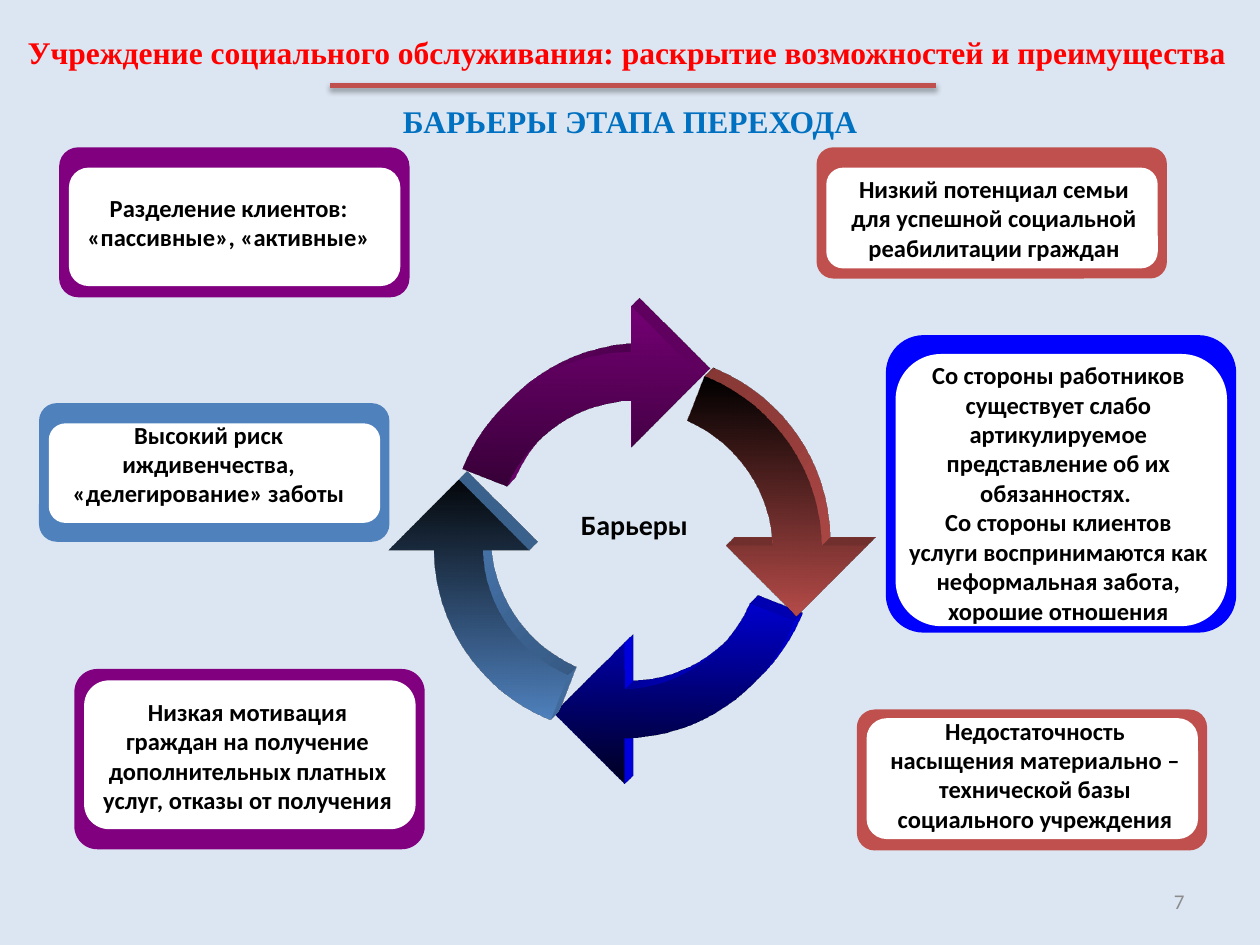
from dataclasses import dataclass

from lxml import etree
from pptx import Presentation
from pptx.dml.color import RGBColor
from pptx.enum import shapes, text
from pptx.oxml.ns import qn
from pptx.util import Pt


@dataclass(frozen=True)
class Theme:
    background: str = "DCE6F2"
    white: str = "FFFFFF"
    black: str = "000000"
    heading: str = "FF0000"
    subheading: str = "0070C0"
    number: str = "8C8C8C"
    purple: str = "800080"
    dark_purple: str = "260026"
    red: str = "C0504D"
    blue: str = "0000FF"
    steel: str = "4F81BD"
    heading_font: str = "Times New Roman"
    body_font: str = "Calibri"
    heading_size: int = 18
    center_size: int = 16
    body_size: int = 14
    number_size: int = 12


THEME = Theme()

# Frame (left, top, height), panel (top, height), text box, colour, paragraphs
CARDS = [
    ((22.3, 230.4, 79.2), (241.9, 56.9), (28.1, 236.2, 182.2, 58.3), THEME.steel,
     ["Высокий риск иждивенчества, «делегирование» заботы"]),
    ((33.8, 84.2, 85.7), (95.8, 67.7), (39.6, 106.6, 182.2, 41), THEME.purple,
     ["Разделение клиентов:", "«пассивные», «активные»"]),
    ((506.2, 191.5, 170), (202.3, 155.5), (511.9, 202.3, 185.8, 163.4), THEME.blue,
     ["Со стороны работников существует слабо артикулируемое представление "
      "об их обязанностях. ",
      "Со стороны клиентов услуги воспринимаются как неформальная забота, "
      "хорошие отношения"]),
    ((466.6, 84.2, 75), (95.8, 57.6), (478.1, 95.8, 180, 58.3), THEME.red,
     ["Низкий потенциал семьи для успешной социальной реабилитации граждан"]),
    ((42.5, 382.3, 103), (388.8, 85), (50.4, 394.6, 182.2, 74.9), THEME.purple,
     ["Низкая мотивация граждан на получение дополнительных платных услуг, "
      "отказы от получения"]),
    ((489.6, 405.4, 80.6), (410.4, 69.1), (500.4, 405.4, 182.2, 74.9), THEME.red,
     ["Недостаточность насыщения материально – технической базы "
      "социального учреждения"]),
]

# Left, top, quarter turns, dark and light gradient colours
ARROWS = [
    (252, 212.4, 1, THEME.black, THEME.blue),
    (247.7, 211, 2, THEME.black, THEME.steel),
    (254.9, 202.3, 3, THEME.dark_purple, THEME.purple),
    (258.5, 207.4, 0, THEME.black, THEME.red),
]
ARROW_SIZE = (211, 208)
ARROW_TILT = 22.9
ARROW_START = (176.9, 74.2)
# One point is a straight side, three are a curve
ARROW_SIDES = [
    [(164.5, 46.7), (135.7, 28.4), (105.7, 27.8)],
    [(105.3, 27.8), (104.8, 27.8), (104.4, 27.8)],
    [(103.6, 0.5)],
    [(104.4, 0.3), (105.1, 0.3), (105.9, 0.3)],
    [(148.1, 0.4), (185.9, 25.1), (202.8, 63.3)],
    [(226.7, 53.2)],
    [(205.2, 106)],
    [(152.4, 84.6)],
    [ARROW_START],
]


def rgb(value):
    return RGBColor.from_string(value)


def write(shape, paragraphs, *, size=THEME.body_size, font=THEME.body_font,
          color=THEME.black, bold=True, align=text.PP_ALIGN.CENTER,
          anchor=text.MSO_ANCHOR.TOP, wrap=True, grow=True):
    tf = shape.text_frame
    tf.word_wrap = wrap
    fit = text.MSO_AUTO_SIZE
    tf.auto_size = fit.SHAPE_TO_FIT_TEXT if grow else fit.NONE
    tf.vertical_anchor = anchor
    for i, line in enumerate(paragraphs):
        p = tf.add_paragraph() if i else tf.paragraphs[0]
        p.alignment = align
        r = p.add_run()
        r.text = line
        r.font.name, r.font.size, r.font.bold = font, Pt(size), bold
        r.font.color.rgb = rgb(color)


def add_text(s, box, paragraphs, **style):
    write(s.shapes.add_textbox(*map(Pt, box)), paragraphs, **style)


def add_rounded(s, box, color, radius):
    sp = s.shapes.add_shape(shapes.MSO_SHAPE.ROUNDED_RECTANGLE, *map(Pt, box))
    sp.adjustments[0] = radius
    sp.shadow.inherit = False
    sp.fill.solid()
    sp.fill.fore_color.rgb = rgb(color)
    sp.line.fill.background()


def add_header(s, box):
    left, top, width, height = box
    heading = dict(size=THEME.heading_size, font=THEME.heading_font,
                   align=text.PP_ALIGN.LEFT, wrap=False)
    title = s.shapes.title
    title.left, title.top, title.width, title.height = map(Pt, box)
    write(title, ["Учреждение социального обслуживания: раскрытие "
                  "возможностей и преимущества"], color=THEME.heading, **heading)

    # Rule with a soft shadow below
    y = top + 33.9
    rule = s.shapes.add_connector(shapes.MSO_CONNECTOR.STRAIGHT, Pt(left + 180),
                                  Pt(y), Pt(left + 526.3), Pt(y))
    rule.line.color.rgb = rgb(THEME.red)
    rule.line.width = Pt(3)
    effects = etree.SubElement(rule._element.spPr, qn("a:effectLst"))
    shadow = etree.SubElement(effects, qn("a:outerShdw"), blurRad=str(Pt(3.1)),
                              dist=str(Pt(1.8)), dir="5400000", rotWithShape="0")
    color = etree.SubElement(shadow, qn("a:srgbClr"), val=THEME.black)
    etree.SubElement(color, qn("a:alpha"), val="35000")

    add_text(s, (left + 214.6, top + 39.6, 276.5, height),
             ["БАРЬЕРЫ ЭТАПА ПЕРЕХОДА"], color=THEME.subheading, **heading)


def add_card(s, frame, panel, text_box, color, paragraphs):
    left, top, height = frame
    add_rounded(s, (left, top, 200.2, height), color, 0.127)
    add_rounded(s, (left + 5.6, panel[0], 189.4, panel[1]), THEME.white, 0.167)
    add_text(s, text_box, paragraphs)


def bend_sides(path, sides):
    """Turn each run of three straight segments into one curve."""
    lines = iter(path.findall(qn("a:lnTo")))
    for side in sides:
        segments = [next(lines) for _ in side]
        if len(side) == 3:
            curve = etree.Element(qn("a:cubicBezTo"))
            segments[0].addprevious(curve)
            for segment in segments:
                curve.append(segment[0])
                path.remove(segment)


def extrude(sp, color):
    """Give the shape a short oblique depth to the upper right."""
    scene = etree.SubElement(sp._element.spPr, qn("a:scene3d"))
    etree.SubElement(scene, qn("a:camera"), prst="legacyObliqueTopRight")
    etree.SubElement(scene, qn("a:lightRig"), rig="legacyFlat3", dir="b")
    solid = etree.SubElement(sp._element.spPr, qn("a:sp3d"),
                             extrusionH=str(Pt(13.6)),
                             prstMaterial="legacyMatte")
    side = etree.SubElement(solid, qn("a:extrusionClr"))
    etree.SubElement(side, qn("a:srgbClr"), val=color)


def add_arrow(s, left, top, turns, dark, light):
    # The frame corner anchors the outline, which fills only part of the frame
    builder = s.shapes.build_freeform(0, 0, scale=1.0)
    builder.move_to(*map(Pt, ARROW_START))
    builder.add_line_segments([(Pt(x), Pt(y)) for side in ARROW_SIDES
                               for x, y in side], close=True)
    sp = builder.convert_to_shape(Pt(left), Pt(top))
    sp.width, sp.height = map(Pt, ARROW_SIZE)
    path = sp._element.spPr.find(".//" + qn("a:path"))
    path.set("w", str(sp.width))
    path.set("h", str(sp.height))
    path.remove(path[0])
    bend_sides(path, ARROW_SIDES)

    sp.rotation = ARROW_TILT + 90 * turns
    sp.shadow.inherit = False
    sp.line.fill.background()
    sp.fill.gradient()
    sp.fill.gradient_angle = 315
    for stop, color, position in zip(sp.fill.gradient_stops, (dark, light), (0, 1)):
        stop.color.rgb = rgb(color)
        stop.position = position
    extrude(sp, light)


def add_cycle(s, label_box):
    add_text(s, label_box, [" Барьеры"], size=THEME.center_size)
    for arrow in ARROWS:
        add_arrow(s, *arrow)


def main():
    prs = Presentation()
    prs.slide_width, prs.slide_height = Pt(720), Pt(540)
    s = prs.slides.add_slide(prs.slide_layouts[5])
    s.background.fill.solid()
    s.background.fill.fore_color.rgb = rgb(THEME.background)

    add_header(s, (8.6, 15.1, 706.3, 28.8))
    for card in CARDS:
        add_card(s, *card)
    add_cycle(s, (285.8, 286.6, 149.8, 26.6))

    # Slide number
    add_text(s, (516.2, 500.4, 167.8, 28.8), ["7"], size=THEME.number_size,
             color=THEME.number, bold=False, align=text.PP_ALIGN.RIGHT,
             anchor=text.MSO_ANCHOR.MIDDLE, grow=False)
    prs.save("out.pptx")


if __name__ == "__main__":
    main()
